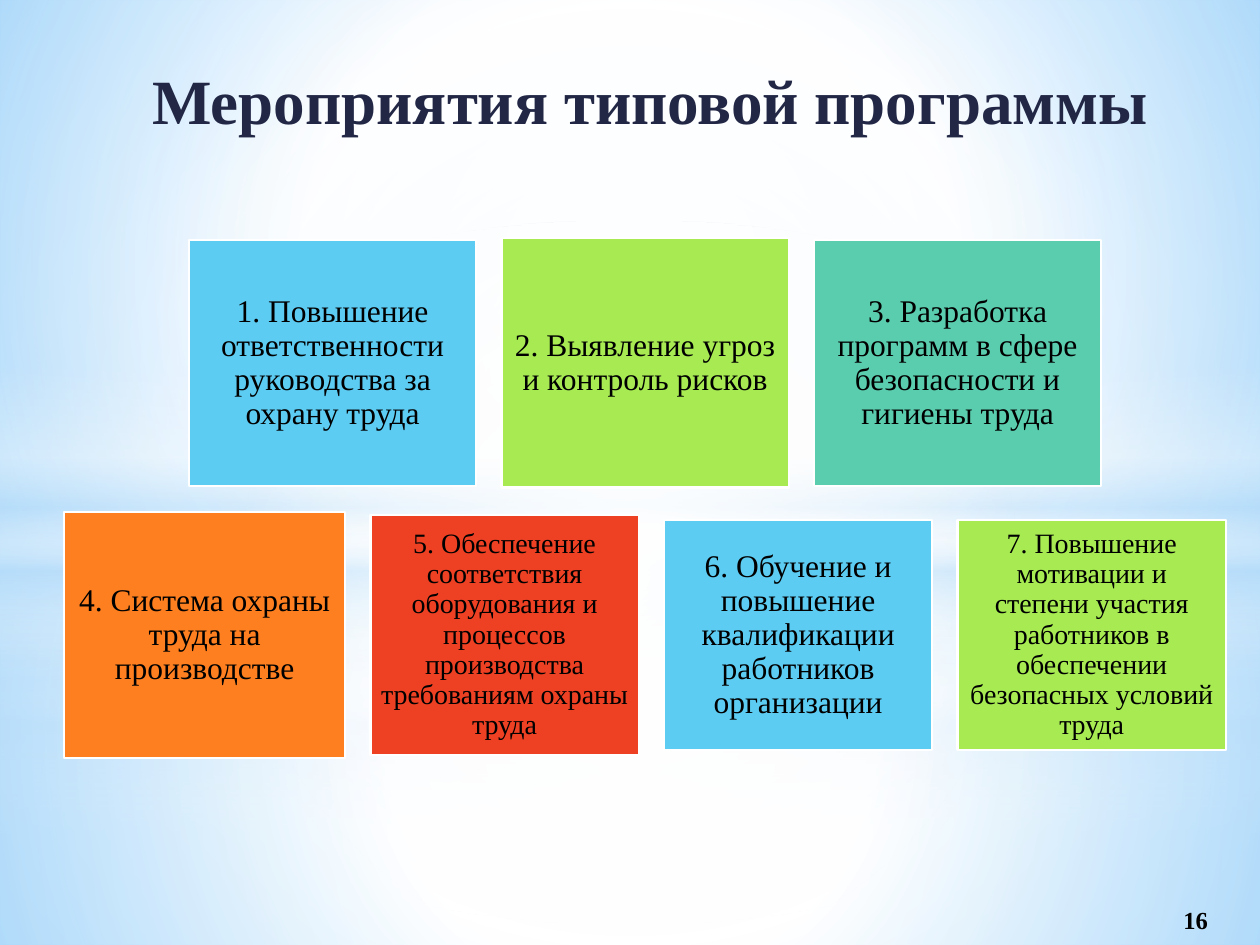
import pptx
import pptx.util
import pptx.oxml
import pptx.oxml.ns
from pptx.dml.color import RGBColor
from pptx.enum.shapes import MSO_SHAPE
from pptx.enum.text import MSO_ANCHOR, MSO_AUTO_SIZE, PP_ALIGN

COLS, ROWS = 10, 7.5
GAP = 0.2
COLORS = {
    "title": "212745", "text": "000000", "white": "FFFFFF", "haze": "B4DCFA",
    "sky": "99D4FE", "azure": "54BDFF", "blue": "5DCCF3", "lime": "A7EA52",
    "teal": "5BCDAF", "orange": "FE7F20", "red": "EE4124",
}

# Gradient stops: position %, colour, opacity %
BACKDROP = [(0, "sky", 100), (60, "white", 100), (100, "azure", 100)]
BAND = [(0, "white", 0), (29, "white", 30), (45, "haze", 40),
        (55, "white", 26), (65, "haze", 60), (100, "white", 0)]


def glow(middle, *opacity):
    return list(zip((0, middle, 100), ("white", "white", "haze"), opacity))


def halo(middle):
    return [(0, "white", 100), (middle, "white", 0), (100, "white", 0)]


# Top row, height in rows, shape, stops, angle (None is radial)
LIGHTS = [
    (5.58, 1.92, MSO_SHAPE.RECTANGLE, glow(37, 91, 76, 79), None),
    (0, 5.58, MSO_SHAPE.RECTANGLE, glow(48, 89, 62, 79), None),
    (4.12, 2.5, MSO_SHAPE.RECTANGLE, BAND, 90),
    (1.75, 5.58, MSO_SHAPE.OVAL, halo(56), None),
    (4.23, 3.27, MSO_SHAPE.RECTANGLE, glow(37, 92, 77, 80), None),
    (0, 4.23, MSO_SHAPE.RECTANGLE, glow(48, 90, 63, 80), None),
    (2.9, 2.5, MSO_SHAPE.RECTANGLE, BAND, 90),
    (1.75, 5.58, MSO_SHAPE.OVAL, halo(54), None),
]

# Left column, middle row, cards: width, height, colour, text size, text
CARD_ROWS = [
    (1.5, 2.88, [
        (2.28, 1.95, "blue", 18, "1. Повышение ответственности руководства за охрану труда"),
        (2.28, 1.98, "lime", 18, "2. Выявление угроз и контроль рисков"),
        (2.28, 1.95, "teal", 18, "3. Разработка программ в сфере безопасности и гигиены труда"),
    ]),
    (0.51, 5.04, [
        (2.23, 1.95, "orange", 18, "4. Система охраны труда на производстве"),
        (2.13, 1.9, "red", 16, "5. Обеспечение соответствия оборудования и процессов "
                               "производства требованиям охраны труда"),
        (2.13, 1.82, "blue", 18, "6. Обучение и повышение квалификации работников организации"),
        (2.13, 1.82, "lime", 16, "7. Повышение мотивации и степени участия работников "
                                 "в обеспечении безопасных условий труда"),
    ]),
]


class Deck:
    """Holds the style and the current slide; lengths are grid columns and rows."""

    font = "Times New Roman"

    def __init__(self):
        self.prs = pptx.Presentation()
        self.prs.slide_width = pptx.util.Inches(10)
        self.prs.slide_height = pptx.util.Inches(7.5)
        self.s = self.prs.slides.add_slide(self.prs.slide_layouts[5])

    def box(self, x, y, w, h):
        cw, rh = self.prs.slide_width / COLS, self.prs.slide_height / ROWS
        return int(x * cw), int(y * rh), int(w * cw), int(h * rh)

    def gradient(self, fill, element, stops, angle=None):
        """Swap the first solid fill inside element for a gradient."""
        fill.solid()
        old = element.find(".//" + pptx.oxml.ns.qn("a:solidFill"))
        gs = "".join(
            f'<a:gs pos="{pos * 1000}"><a:srgbClr val="{COLORS[color]}">'
            f'<a:alpha val="{alpha * 1000}"/></a:srgbClr></a:gs>'
            for pos, color, alpha in stops)
        if angle is None:
            way = ('<a:path path="circle"><a:fillToRect l="50000" t="50000" '
                   'r="50000" b="50000"/></a:path>')
        else:
            way = f'<a:lin ang="{angle * 60000}" scaled="0"/>'
        old.getparent().replace(old, pptx.oxml.parse_xml(
            f'<a:gradFill {pptx.oxml.ns.nsdecls("a")} rotWithShape="1">'
            f'<a:gsLst>{gs}</a:gsLst>{way}</a:gradFill>'))

    def backdrop(self, stops):
        self.gradient(self.s.background.fill, self.s.element, stops)

    def light(self, y, h, kind, stops, angle):
        sp = self.s.shapes.add_shape(kind, *self.box(0, y, COLS, h))
        sp.shadow.inherit = False
        self.gradient(sp.fill, sp.element, stops, angle)
        sp.line.fill.background()

    def label(self, sp, text, size, color="text", bold=False, anchor=MSO_ANCHOR.MIDDLE):
        tf = sp.text_frame
        tf.text = text
        tf.word_wrap = True
        tf.auto_size = MSO_AUTO_SIZE.NONE
        tf.vertical_anchor = anchor
        p = tf.paragraphs[0]
        p.alignment = PP_ALIGN.CENTER
        p.font.name = self.font
        p.font.size = pptx.util.Pt(size)
        p.font.bold = bold
        p.font.color.rgb = RGBColor.from_string(COLORS[color])
        return tf

    def title(self, text, *place):
        sp = self.s.shapes.title
        sp.left, sp.top, sp.width, sp.height = self.box(*place)
        tf = self.label(sp, text, 36, "title", True, MSO_ANCHOR.TOP)
        tf.paragraphs[0].space_before = pptx.util.Pt(6)
        sp.element.getparent().append(sp.element)  # bring in front of the lights

    def card(self, x, y, w, h, color, size, text):
        sp = self.s.shapes.add_shape(MSO_SHAPE.RECTANGLE, *self.box(x, y, w, h))
        sp.shadow.inherit = False
        sp.fill.solid()
        sp.fill.fore_color.rgb = RGBColor.from_string(COLORS[color])
        sp.line.color.rgb = RGBColor.from_string(COLORS["white"])
        sp.line.width = pptx.util.Pt(1.25)
        tf = self.label(sp, text, size)
        tf.paragraphs[0].line_spacing = 0.9
        tf.margin_left = tf.margin_right = pptx.util.Inches(0.07)
        tf.margin_top = tf.margin_bottom = pptx.util.Inches(0.07)

    def page_number(self, text, *place):
        self.label(self.s.shapes.add_textbox(*self.box(*place)), text, 14, bold=True)


def main():
    deck = Deck()
    deck.backdrop(BACKDROP)
    for light in LIGHTS:
        deck.light(*light)
    deck.title("Мероприятия типовой программы", 0.83, 0.44, 8.66, 0.91)
    for x, middle, cards in CARD_ROWS:
        for w, h, *look in cards:
            deck.card(x, middle - h / 2, w, h, *look)
            x += w + GAP
    deck.page_number("16", 9.17, 7.1, 0.64, 0.4)
    deck.prs.save("out.pptx")


if __name__ == "__main__":
    main()
